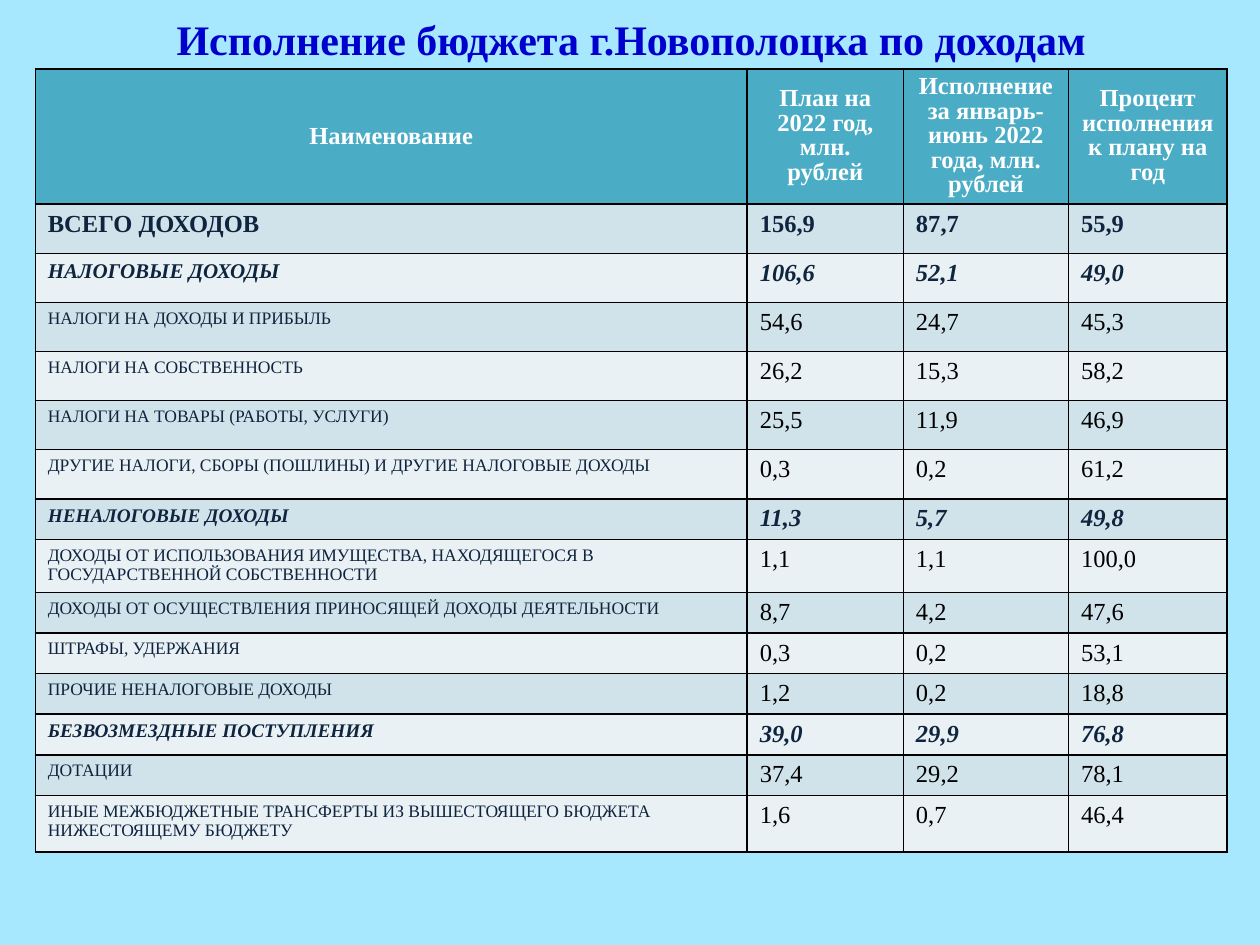
from lxml import etree
from pptx import Presentation
from pptx.dml.color import RGBColor
from pptx.enum.text import MSO_ANCHOR, MSO_AUTO_SIZE, PP_ALIGN
from pptx.oxml.ns import qn
from pptx.util import Inches, Pt

CENTER, LEFT = PP_ALIGN.CENTER, PP_ALIGN.LEFT
MIDDLE, TOP = MSO_ANCHOR.MIDDLE, MSO_ANCHOR.TOP
TITLE_ONLY = 5

FONT = "Times New Roman"
COLORS = {
    "background": "A7E8FF", "title": "0000CC", "header": "4BACC6",
    "header_text": "FFFFFF", "band_dark": "D0E3EA", "band_light": "E9F1F5",
    "navy": "0F243E", "black": "000000",
}

# Row kinds: name size, bold, italic, figure colour
KINDS = {
    "total": (14, True, False, "navy"),
    "main_group": (12, True, True, "navy"),
    "group": (11, True, True, "navy"),
    "item": (10, False, False, "black"),
}

# Column widths and row heights, in percent of the slide
COLUMN_WIDTHS = [56.5, 12.4, 13.1, 12.6]
HEADER_HEIGHT, TALL, SHORT = 13.9, 5.2, 4.3
HEADERS = [
    "Наименование",
    "План на 2022 год, млн. рублей",
    "Исполнение за январь-июнь 2022 года, млн. рублей",
    "Процент исполнения к плану на год",
]
INCOME = [
    ("total", TALL, "ВСЕГО ДОХОДОВ", "156,9", "87,7", "55,9"),
    ("main_group", TALL, "НАЛОГОВЫЕ ДОХОДЫ", "106,6", "52,1", "49,0"),
    ("item", TALL, "НАЛОГИ НА ДОХОДЫ И ПРИБЫЛЬ", "54,6", "24,7", "45,3"),
    ("item", TALL, "НАЛОГИ НА СОБСТВЕННОСТЬ", "26,2", "15,3", "58,2"),
    ("item", TALL, "НАЛОГИ НА ТОВАРЫ (РАБОТЫ, УСЛУГИ)", "25,5", "11,9", "46,9"),
    ("item", TALL, "ДРУГИЕ НАЛОГИ, СБОРЫ (ПОШЛИНЫ) И ДРУГИЕ НАЛОГОВЫЕ ДОХОДЫ",
     "0,3", "0,2", "61,2"),
    ("group", SHORT, "НЕНАЛОГОВЫЕ ДОХОДЫ", "11,3", "5,7", "49,8"),
    ("item", 5.6, "ДОХОДЫ ОТ ИСПОЛЬЗОВАНИЯ ИМУЩЕСТВА, НАХОДЯЩЕГОСЯ В "
     "ГОСУДАРСТВЕННОЙ СОБСТВЕННОСТИ", "1,1", "1,1", "100,0"),
    ("item", SHORT, "ДОХОДЫ ОТ ОСУЩЕСТВЛЕНИЯ ПРИНОСЯЩЕЙ ДОХОДЫ ДЕЯТЕЛЬНОСТИ",
     "8,7", "4,2", "47,6"),
    ("item", SHORT, "ШТРАФЫ, УДЕРЖАНИЯ", "0,3", "0,2", "53,1"),
    ("item", SHORT, "ПРОЧИЕ НЕНАЛОГОВЫЕ ДОХОДЫ", "1,2", "0,2", "18,8"),
    ("group", SHORT, "БЕЗВОЗМЕЗДНЫЕ ПОСТУПЛЕНИЯ", "39,0", "29,9", "76,8"),
    ("item", SHORT, "ДОТАЦИИ", "37,4", "29,2", "78,1"),
    ("item", 6, "ИНЫЕ МЕЖБЮДЖЕТНЫЕ ТРАНСФЕРТЫ ИЗ ВЫШЕСТОЯЩЕГО БЮДЖЕТА "
     "НИЖЕСТОЯЩЕМУ БЮДЖЕТУ", "1,6", "0,7", "46,4"),
]


class SlideBuilder:
    def __init__(self, presentation):
        self.width = presentation.slide_width
        self.height = presentation.slide_height
        self.slide = presentation.slides.add_slide(
            presentation.slide_layouts[TITLE_ONLY])
        fill = self.slide.background.fill
        fill.solid()
        fill.fore_color.rgb = self.color("background")

    def color(self, name):
        return RGBColor.from_string(COLORS[name])

    def across(self, percent):
        return round(self.width * percent / 100)

    def down(self, percent):
        return round(self.height * percent / 100)

    def set_text(self, frame, text, size, color, bold=False, italic=False,
                 align=LEFT, spacing=None):
        frame.text = text
        paragraph = frame.paragraphs[0]
        paragraph.alignment = align
        if spacing:
            paragraph.line_spacing = Pt(spacing)
        font = paragraph.font
        font.name, font.size = FONT, Pt(size)
        font.bold, font.italic = bold, italic
        font.color.rgb = self.color(color)

    def title(self, text, left, top, width, height):
        shape = self.slide.shapes.title
        shape.left, shape.top = self.across(left), self.down(top)
        shape.width, shape.height = self.across(width), self.down(height)
        frame = shape.text_frame
        frame.auto_size = MSO_AUTO_SIZE.NONE
        frame.vertical_anchor = MIDDLE
        self.set_text(frame, text, 24, "title", bold=True, align=CENTER, spacing=44)

    def table(self, left, top, widths, heights):
        table = self.slide.shapes.add_table(
            len(heights), len(widths), self.across(left), self.down(top),
            self.across(sum(widths)), self.down(sum(heights))).table
        for column, width in zip(table.columns, widths):
            column.width = self.across(width)
        for row, height in zip(table.rows, heights):
            row.height = self.down(height)
        return table

    def cell(self, cell, text, fill, anchor=TOP, **style):
        cell.vertical_anchor = anchor
        self.set_text(cell.text_frame, text, **style)
        self.borders(cell)
        cell.fill.solid()
        cell.fill.fore_color.rgb = self.color(fill)

    def borders(self, cell):
        properties = cell._tc.get_or_add_tcPr()
        for side in ("a:lnL", "a:lnR", "a:lnT", "a:lnB"):
            line = etree.SubElement(properties, qn(side), w=str(Pt(1)))
            fill = etree.SubElement(line, qn("a:solidFill"))
            etree.SubElement(fill, qn("a:srgbClr"), val=COLORS["black"])


def main():
    presentation = Presentation()
    presentation.slide_width, presentation.slide_height = Inches(10), Inches(7.5)
    builder = SlideBuilder(presentation)

    builder.title("Исполнение бюджета г.Новополоцка по доходам", 5.1, 0.5, 90, 4.3)

    # Income table
    heights = [HEADER_HEIGHT] + [row[1] for row in INCOME]
    table = builder.table(2.8, 7.3, COLUMN_WIDTHS, heights)

    # Header row
    for column, text in enumerate(HEADERS):
        builder.cell(table.cell(0, column), text, "header", MIDDLE, size=14,
                     color="header_text", bold=True, align=CENTER,
                     spacing=14 if column else None)

    # Income rows in alternating bands
    for index, (kind, _, name, *figures) in enumerate(INCOME, start=1):
        size, bold, italic, figure_color = KINDS[kind]
        band = "band_dark" if index % 2 else "band_light"
        builder.cell(table.cell(index, 0), name, band, size=size,
                     color="navy", bold=bold, italic=italic)
        for column, figure in enumerate(figures, start=1):
            builder.cell(table.cell(index, column), figure, band, size=14,
                         color=figure_color, bold=bold, italic=italic)

    presentation.save("out.pptx")


if __name__ == "__main__":
    main()
